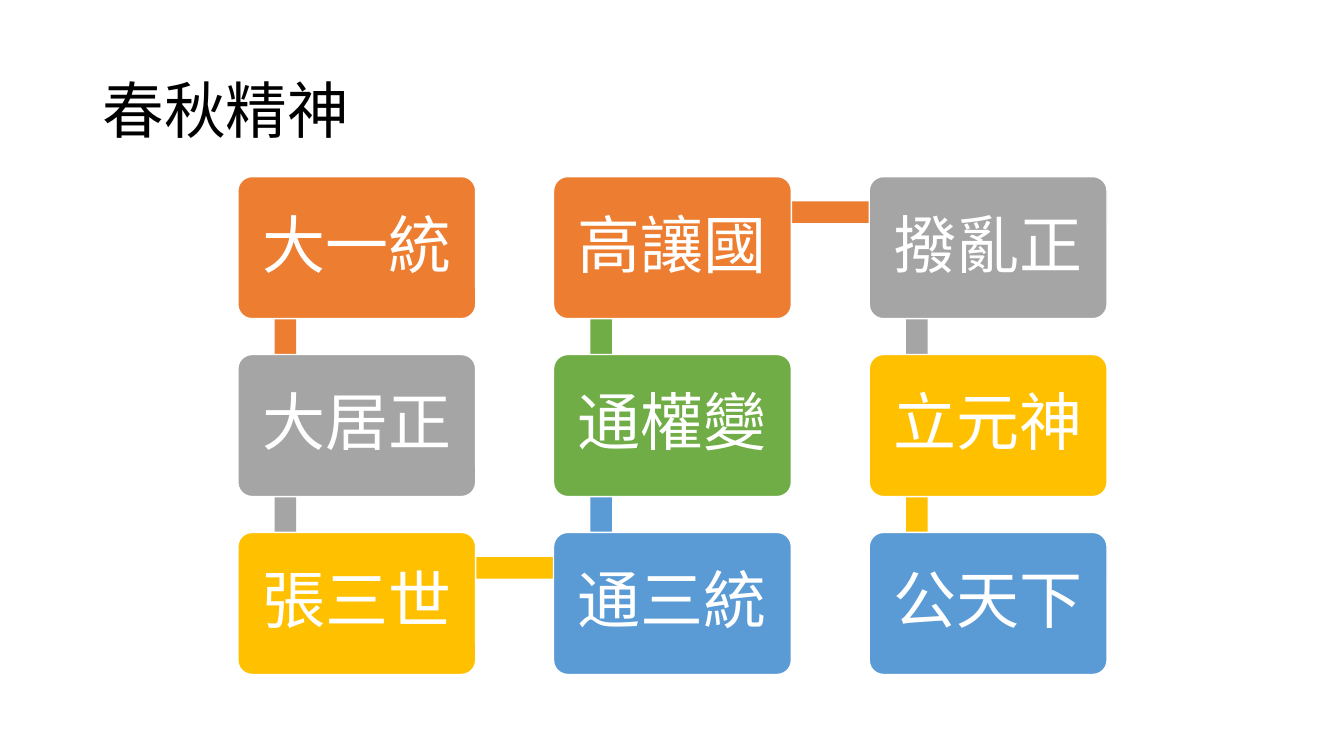
from lxml.etree import SubElement
from pptx import Presentation
from pptx.dml.color import RGBColor
from pptx.enum.shapes import MSO_SHAPE as Shape
from pptx.enum.text import MSO_ANCHOR as Anchor, PP_ALIGN as Align
from pptx.oxml.ns import qn
from pptx.util import Pt

FONT = "Noto Sans CJK SC"
BLACK = RGBColor(0x00, 0x00, 0x00)
WHITE = RGBColor(0xFF, 0xFF, 0xFF)
ORANGE = RGBColor(0xED, 0x7D, 0x31)
GRAY = RGBColor(0xA5, 0xA5, 0xA5)
YELLOW = RGBColor(0xFF, 0xC0, 0x00)
BLUE = RGBColor(0x5B, 0x9B, 0xD5)
GREEN = RGBColor(0x70, 0xAD, 0x47)

# Grid of cards, in points
LEFT, TOP = 169.9, 126.1
STEP_X, STEP_Y = 225.5, 127.1
CARD_WIDTH, CARD_HEIGHT = 169.9, 101.5
ROWS = 3

# Bars join the same inner point of successive cards
JOINT_X, JOINT_Y = 34, 25.4
BAR_THICKNESS = 15.3

PRINCIPLES = [
    ("大一統", ORANGE), ("大居正", GRAY), ("張三世", YELLOW),
    ("通三統", BLUE), ("通權變", GREEN), ("高讓國", ORANGE),
    ("撥亂正", GRAY), ("立元神", YELLOW), ("公天下", BLUE),
]


def card_position(index):
    """The chain runs down one column and up the next."""
    column, row = divmod(index, ROWS)
    if column % 2:
        row = ROWS - 1 - row
    return LEFT + column * STEP_X, TOP + row * STEP_Y


def write_text(shape, text, size, color, align):
    frame = shape.text_frame
    frame.text = text
    frame.vertical_anchor = Anchor.MIDDLE
    para = frame.paragraphs[0]
    para.alignment = align
    para.line_spacing = 0.9
    span = para.runs[0]
    span.font.size = Pt(size)
    span.font.color.rgb = color
    span.font.name = FONT
    SubElement(span.font._element, qn("a:ea"), typeface=FONT)


def add_block(page, kind, left, top, width, height, color):
    block = page.shapes.add_shape(kind, Pt(left), Pt(top), Pt(width), Pt(height))
    block.shadow.inherit = False
    block.fill.solid()
    block.fill.fore_color.rgb = color
    block.line.fill.background()
    return block


def add_bar(page, start, end, color):
    (x1, y1), (x2, y2) = start, end
    left, top = min(x1, x2) + JOINT_X, min(y1, y2) + JOINT_Y
    if x1 == x2:
        add_block(page, Shape.RECTANGLE, left - BAR_THICKNESS / 2, top,
                  BAR_THICKNESS, abs(y2 - y1), color)
    else:
        add_block(page, Shape.RECTANGLE, left, top - BAR_THICKNESS / 2,
                  abs(x2 - x1), BAR_THICKNESS, color)


def add_card(page, position, text, color):
    card = add_block(page, Shape.ROUNDED_RECTANGLE, *position,
                     CARD_WIDTH, CARD_HEIGHT, color)
    card.adjustments[0] = 0.1
    card.line.color.rgb = WHITE
    card.line.width = Pt(1)
    frame = card.text_frame
    frame.word_wrap = False
    frame.margin_left = frame.margin_right = Pt(13.5)
    frame.margin_top = frame.margin_bottom = Pt(13.5)
    write_text(card, text, 45, WHITE, Align.CENTER)


def add_title(page, text):
    title = page.shapes.title
    title.left, title.top = Pt(66), Pt(28.8)
    title.width, title.height = Pt(828), Pt(104.4)
    write_text(title, text, 44, BLACK, Align.LEFT)


def main():
    deck = Presentation()
    deck.slide_width, deck.slide_height = Pt(960), Pt(540)
    page = deck.slides.add_slide(deck.slide_layouts[5])
    add_title(page, "春秋精神")

    # Each bar lies behind the two cards it joins
    for index, (text, color) in enumerate(PRINCIPLES):
        position = card_position(index)
        if index + 1 < len(PRINCIPLES):
            add_bar(page, position, card_position(index + 1), color)
        add_card(page, position, text, color)

    deck.save("out.pptx")


if __name__ == "__main__":
    main()
